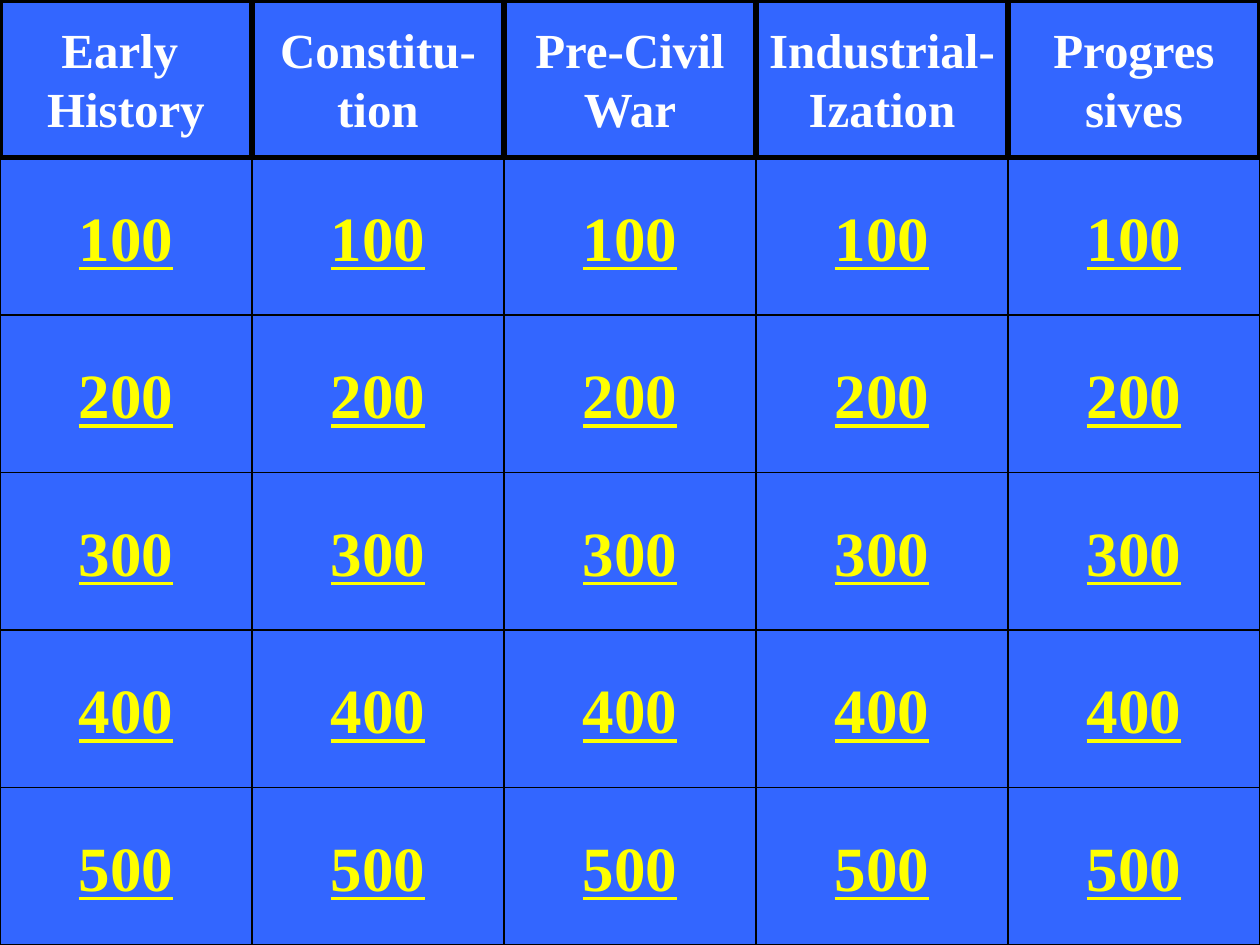
from pptx import Presentation
from pptx import util as u
from pptx.dml.color import RGBColor
from pptx.enum import shapes, text

# Content
CATEGORIES = [
    ("Early ", "History"),
    ("Constitu-", "tion"),
    ("Pre-Civil", "War"),
    ("Industrial-", "Ization"),
    ("Progres", "sives"),
]
VALUES = [100, 200, 300, 400, 500]

COLORS = {"board": "3366FF", "line": "000000", "header": "FFFFFF", "value": "FFFF00"}
FONT = "Times New Roman"

# Grid, at 100 px to the inch
PX = u.Inches(1) // 100
WIDTH, HEIGHT = 1000, 750
CELL_W = WIDTH // len(CATEGORIES)
CELL_H = HEIGHT // (len(VALUES) + 1)


def rgb(name):
    return RGBColor.from_string(COLORS[name])


def add_cell(page, kind, column, row, lines, size, color, border, underline=None):
    box = page.shapes.add_shape(
        kind, column * CELL_W * PX, row * CELL_H * PX, CELL_W * PX, CELL_H * PX)
    box.shadow.inherit = False
    box.fill.solid()
    box.fill.fore_color.rgb = rgb("board")
    box.line.color.rgb = rgb("line")
    box.line.width = u.Pt(border)
    frame = box.text_frame
    frame.word_wrap = False
    frame.vertical_anchor = text.MSO_ANCHOR.MIDDLE
    frame.text = "\n".join(lines)
    for para in frame.paragraphs:
        para.alignment = text.PP_ALIGN.CENTER
        font = para.font
        font.name, font.size, font.bold = FONT, u.Pt(size), True
        font.underline = underline
        font.color.rgb = rgb(color)


deck = Presentation()
deck.slide_width, deck.slide_height = WIDTH * PX, HEIGHT * PX
page = deck.slides.add_slide(deck.slide_layouts[6])
page.background.fill.solid()
page.background.fill.fore_color.rgb = rgb("board")

# Value buttons
for column in range(len(CATEGORIES)):
    for row, value in enumerate(VALUES, start=1):
        add_cell(page, shapes.MSO_SHAPE.ACTION_BUTTON_CUSTOM, column, row,
                 [str(value)], 36, "value", 0.75, underline=True)

# Category headers, over the buttons
for column, lines in enumerate(CATEGORIES):
    add_cell(page, shapes.MSO_SHAPE.RECTANGLE, column, 0, lines, 28, "header", 3)

deck.save("out.pptx")
